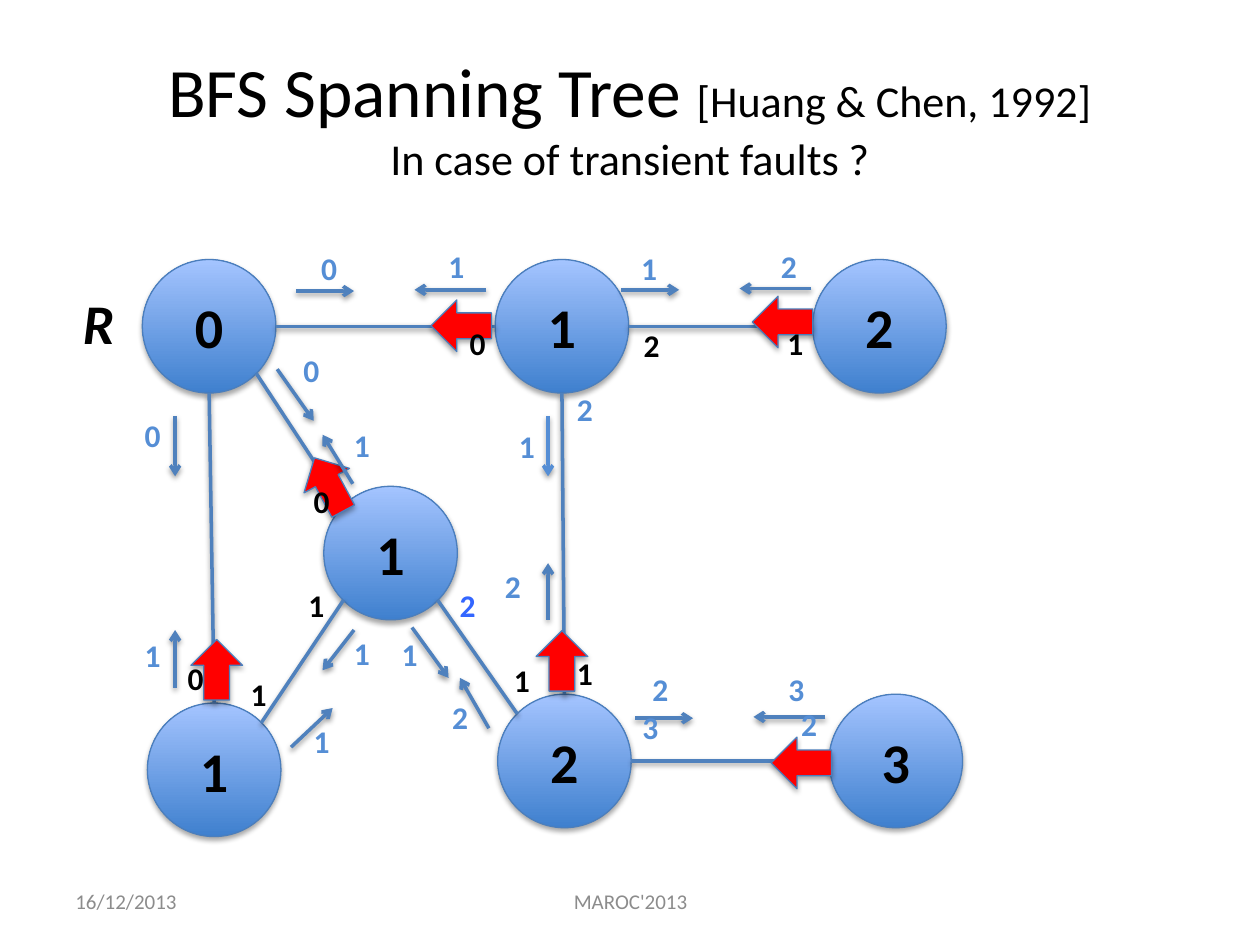
from dataclasses import dataclass
from math import cos, radians, sin

from lxml import etree
from pptx import Presentation
from pptx.dml.color import RGBColor
from pptx.enum.shapes import MSO_CONNECTOR, MSO_SHAPE
from pptx.enum.text import MSO_ANCHOR, MSO_AUTO_SIZE, PP_ALIGN
from pptx.oxml import parse_xml
from pptx.oxml.ns import nsdecls, qn
from pptx.util import Inches, Pt

STRAIGHT = MSO_CONNECTOR.STRAIGHT
OVAL, BLOCK_ARROW = MSO_SHAPE.OVAL, MSO_SHAPE.RIGHT_ARROW
MIDDLE, TOP = MSO_ANCHOR.MIDDLE, MSO_ANCHOR.TOP
LEFT, CENTER = PP_ALIGN.LEFT, PP_ALIGN.CENTER
FIT_TEXT = MSO_AUTO_SIZE.SHAPE_TO_FIT_TEXT


@dataclass(frozen=True)
class Theme:
    font: str = "Calibri"
    ink: str = "000000"
    muted: str = "8C8C8C"
    edge: str = "4F81BD"
    outline: str = "4B7EBC"
    message: str = "558ED5"
    accent: str = "3366FF"
    parent: str = "FF0000"
    node_bottom: str = "3F80CE"
    node_top: str = "A4C4FF"
    title_size: float = 39.6
    subtitle_size: float = 25.2
    node_size: float = 32
    label_size: float = 18
    footer_size: float = 12
    edge_width: float = 2
    outline_width: float = 0.75


THEME = Theme()
DIAMETER = 1.06
NODE_TOP, NODE_LEFT, NODE_BOTTOM, NODE_RIGHT = 0, 2, 4, 6
UPPER_LEFT, LOWER_LEFT, LOWER_RIGHT, UPPER_RIGHT = 1, 3, 5, 7

NODES = {
    "root": (1.13, 2.06, "0"),
    "upper": (3.93, 2.06, "1"),
    "far_upper": (6.45, 2.06, "2"),
    "center": (2.57, 3.86, "1"),
    "lower_left": (1.17, 5.58, "1"),
    "lower": (3.95, 5.51, "2"),
    "far_lower": (6.58, 5.51, "3"),
}
EDGES = [
    ("root", LOWER_RIGHT, "center", UPPER_LEFT),
    ("upper", NODE_BOTTOM, "lower", NODE_TOP),
    ("center", LOWER_RIGHT, "lower", UPPER_LEFT),
    ("root", NODE_BOTTOM, "lower_left", NODE_TOP),
    ("center", LOWER_LEFT, "lower_left", UPPER_RIGHT),
    ("root", NODE_RIGHT, "upper", NODE_LEFT),
    ("upper", NODE_RIGHT, "far_upper", NODE_LEFT),
    ("far_lower", NODE_LEFT, "lower", NODE_RIGHT),
]
PARENT_ARROWS = [
    (5.97, 2.35, 180), (6.12, 5.85, 180), (4.22, 5.04, 270),
    (1.48, 5.11, 270), (2.37, 3.64, 241.7), (3.42, 2.38, 180),
]
DISTANCES = [
    ("1", 6.15, 2.52), ("2", 5.01, 2.54), ("1", 4.48, 5.14), ("0", 3.63, 2.52),
    ("1", 3.98, 5.2), ("1", 2.35, 4.6), ("1", 1.89, 5.31), ("0", 1.39, 5.18),
    ("0", 2.39, 3.78),
]
MESSAGES = [
    ("2", 4.48, 3.05), ("3", 5, 5.57), ("2", 6.26, 5.55), ("2", 6.1, 1.91),
    ("1", 4.99, 1.93), ("1", 3.46, 1.91), ("0", 2.45, 1.93), ("1", 4.02, 3.34),
    ("2", 3.91, 4.45), ("2", 5.08, 5.27), ("3", 6.16, 5.27), ("2", 3.49, 5.49),
    ("1", 3.09, 4.99), ("1", 2.39, 5.68), ("1", 2.71, 4.98), ("1", 1.05, 5),
    ("0", 1.05, 3.25), ("0", 2.31, 2.74), ("1", 2.71, 3.33),
]
MESSAGE_ARROWS = [
    (1.39, 3.3, 1.39, 3.78), (2.35, 2.31, 2.81, 2.31),
    (2.2, 2.93, 2.49, 3.34), (3.86, 2.3, 3.29, 2.3),
    (4.93, 2.3, 5.39, 2.3), (6.44, 2.29, 5.87, 2.29),
    (4.35, 4.92, 4.35, 4.47), (1.39, 5.46, 1.39, 5),
    (2.8, 3.84, 2.56, 3.45), (3.88, 5.78, 3.65, 5.38),
    (3.27, 4.98, 3.56, 5.38), (5.04, 5.7, 5.5, 5.7),
    (6.55, 5.69, 5.98, 5.69), (2.81, 5, 2.56, 5.32),
    (2.31, 5.93, 2.64, 5.62),
]


def rgb(color):
    return RGBColor.from_string(color)


def add_shadow(element, opacity, distance):
    element.spPr.append(parse_xml(
        f'<a:effectLst {nsdecls("a")}><a:outerShdw blurRad="{Pt(3.1)}" '
        f'dist="{Pt(distance)}" dir="5400000" rotWithShape="0">'
        f'<a:srgbClr val="{THEME.ink}"><a:alpha val="{opacity * 1000}"/></a:srgbClr>'
        '</a:outerShdw></a:effectLst>'))


def add_run(paragraph, text, size, color=THEME.ink, bold=False, italic=False):
    run = paragraph.add_run()
    run.text = text
    font = run.font
    font.name, font.size = THEME.font, Pt(size)
    font.bold, font.italic = bold, italic
    font.color.rgb = rgb(color)


def add_text_box(slide, box, anchor=MIDDLE, align=LEFT, wrap=True):
    frame = slide.shapes.add_textbox(*map(Inches, box)).text_frame
    frame.word_wrap, frame.vertical_anchor = wrap, anchor
    if not wrap:
        frame.auto_size = FIT_TEXT
    paragraph = frame.paragraphs[0]
    paragraph.alignment = align
    return paragraph


def add_label(slide, text, left, top, color):
    paragraph = add_text_box(slide, (left, top, 0.33, 0.4), TOP, wrap=False)
    add_run(paragraph, text, THEME.label_size, color, bold=True)


def finish_shape(shape):
    shape.line.color.rgb = rgb(THEME.outline)
    shape.line.width = Pt(THEME.outline_width)
    add_shadow(shape._element, 35, 1.8)


def add_node(slide, left, top, distance):
    node = slide.shapes.add_shape(
        OVAL, *map(Inches, (left, top, DIAMETER, DIAMETER)))
    node.fill.gradient()
    node.fill.gradient_angle = 90
    for stop, color in zip(node.fill.gradient_stops,
                           (THEME.node_bottom, THEME.node_top)):
        stop.color.rgb = rgb(color)
    finish_shape(node)
    frame = node.text_frame
    frame.vertical_anchor = MIDDLE
    frame.margin_left = frame.margin_right = Inches(0.04)
    frame.paragraphs[0].alignment = CENTER
    add_run(frame.paragraphs[0], distance, THEME.node_size, bold=True)
    return node


def add_line(slide, start_x, start_y, end_x, end_y, color=THEME.edge, arrow=False):
    line = slide.shapes.add_connector(
        STRAIGHT, *map(Inches, (start_x, start_y, end_x, end_y)))
    line.line.color.rgb = rgb(color)
    line.line.width = Pt(THEME.edge_width)
    if arrow:
        etree.SubElement(line.line._get_or_add_ln(), qn("a:tailEnd"), type="arrow")
    add_shadow(line._element, 38, 1.6)
    return line


def site_point(name, site):
    left, top, _ = NODES[name]
    radius, angle = DIAMETER / 2, radians(90 + 45 * site)
    return left + radius + radius * cos(angle), top + radius - radius * sin(angle)


def add_edge(slide, nodes, start, start_site, end, end_site):
    edge = add_line(slide, *site_point(start, start_site), *site_point(end, end_site))
    joints = edge._element.find(".//" + qn("p:cNvCxnSpPr"))
    for tag, name, site in (("a:stCxn", start, start_site),
                            ("a:endCxn", end, end_site)):
        etree.SubElement(joints, qn(tag), id=str(nodes[name].shape_id), idx=str(site))


def add_parent_arrow(slide, left, top, rotation):
    arrow = slide.shapes.add_shape(
        BLOCK_ARROW, *map(Inches, (left, top, 0.48, 0.41)))
    arrow.rotation = rotation
    arrow.fill.solid()
    arrow.fill.fore_color.rgb = rgb(THEME.parent)
    finish_shape(arrow)


def add_heading(slide):
    title = add_text_box(slide, (0.5, 0.3, 9, 1.25), align=CENTER)
    add_run(title, "BFS Spanning Tree ", THEME.title_size)
    add_run(title, "[Huang & Chen, 1992]", THEME.subtitle_size)
    title.add_line_break()
    add_run(title, "In case of transient faults ?", THEME.subtitle_size)


def add_footer(slide):
    for text, left, width, align in (("16/12/2013", 0.5, 2.33, LEFT),
                                     ("MAROC'2013", 3.42, 3.17, CENTER)):
        paragraph = add_text_box(slide, (left, 6.95, width, 0.4), align=align)
        add_run(paragraph, text, THEME.footer_size, THEME.muted)


def main():
    deck = Presentation()
    deck.slide_width, deck.slide_height = Inches(10), Inches(7.5)
    slide = deck.slides.add_slide(deck.slide_layouts[6])
    add_footer(slide)
    add_heading(slide)
    nodes = {name: add_node(slide, *node) for name, node in NODES.items()}
    for edge in EDGES:
        add_edge(slide, nodes, *edge)
    root_mark = add_text_box(slide, (0.56, 2.24, 0.56, 0.64), TOP, wrap=False)
    add_run(root_mark, "R", THEME.node_size, bold=True, italic=True)
    for arrow in PARENT_ARROWS:
        add_parent_arrow(slide, *arrow)
    for label in DISTANCES:
        add_label(slide, *label, THEME.ink)
    add_label(slide, "2", 3.55, 4.6, THEME.accent)
    for ends in MESSAGE_ARROWS:
        add_line(slide, *ends, arrow=True)
    add_line(slide, 4.35, 3.3, 4.35, 3.78, THEME.message, arrow=True)
    for label in MESSAGES:
        add_label(slide, *label, THEME.message)
    deck.save("out.pptx")


if __name__ == "__main__":
    main()
